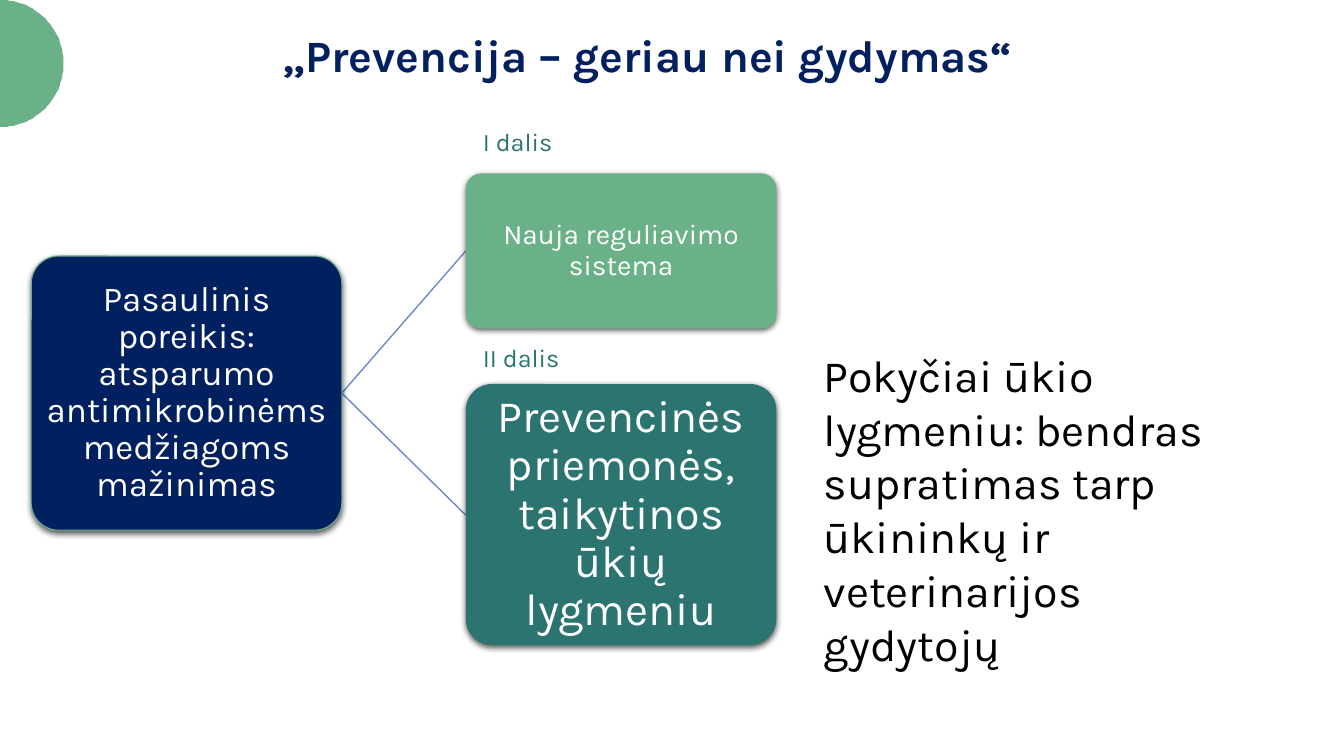
import math
from lxml import etree
from pptx import Presentation, util as u
from pptx.dml.color import RGBColor
from pptx.enum import shapes, text
from pptx.oxml import parse_xml
from pptx.oxml.ns import nsdecls, qn

PX = 9144
HUES = {"navy": "002060", "green": "6BB188", "teal": "2C7470",
        "link": "6D89CB", "white": "FFFFFF", "black": "000000"}
SHADE = (f'<a:effectLst {nsdecls("a")}><a:outerShdw blurRad="57150" dist="19050" '
         'dir="5400000" algn="ctr" rotWithShape="0"><a:srgbClr val="000000">'
         '<a:alpha val="63000"/></a:srgbClr></a:outerShdw></a:effectLst>')


def hue(name):
    return RGBColor.from_string(HUES[name])


def write(shape, words, size, color, bold=False, align="LEFT", anchor="TOP",
          gap=1.0, inset=None):
    frame = shape.text_frame
    frame.word_wrap = True
    frame.vertical_anchor = text.MSO_ANCHOR[anchor]
    if inset is not None:
        frame.margin_left = frame.margin_right = inset * PX
        frame.margin_top = frame.margin_bottom = inset * PX
    para = frame.paragraphs[0]
    para.alignment = text.PP_ALIGN[align]
    para.line_spacing = gap
    run = para.add_run()
    run.text = words
    run.font.name = "Karla"
    run.font.size = u.Pt(size)
    run.font.bold = bold
    run.font.color.rgb = hue(color)


deck = Presentation()
deck.slide_width, deck.slide_height = 1333 * PX, 750 * PX
slide = deck.slides.add_slide(deck.slide_layouts[6])
items = slide.shapes

turns = [math.radians(deg) for deg in range(-90, 91, 3)]
arc = [(63 * math.cos(t), 63 + 63 * math.sin(t)) for t in turns]
pen = items.build_freeform(*arc[0], scale=PX)
pen.add_line_segments(arc[1:], close=True)
disc = pen.convert_to_shape()
disc.shadow.inherit = False
disc.fill.solid()
disc.fill.fore_color.rgb = hue("green")
disc.line.fill.background()

for end in (249, 511):
    link = items.add_connector(shapes.MSO_CONNECTOR.STRAIGHT,
                               339 * PX, 390 * PX, 462 * PX, end * PX)
    link.line.color.rgb = hue("link")
    link.line.width = u.Pt(1)
    etree.SubElement(link._element.spPr, qn("a:effectLst"))

cards = [
    (31, 254, 272, "navy", "green", 25, 0.88,
     "Pasaulinis poreikis: atsparumo antimikrobinėms medžiagoms mažinimas"),
    (462, 172, 154, "green", None, 20, 0.9, "Nauja reguliavimo sistema"),
    (462, 381, 259, "teal", None, 32, 0.9,
     "Prevencinės priemonės, taikytinos ūkių lygmeniu"),
]
for left, top, high, fill, edge, size, gap, words in cards:
    card = items.add_shape(shapes.MSO_SHAPE.ROUNDED_RECTANGLE,
                           left * PX, top * PX, 308 * PX, high * PX)
    card.adjustments[0] = 0.1
    card.fill.solid()
    card.fill.fore_color.rgb = hue(fill)
    if edge:
        card.line.color.rgb = hue(edge)
        card.line.width = u.Pt(0.75)
    else:
        card.line.fill.background()
    card._element.spPr.append(parse_xml(SHADE))
    write(card, words, size, "white", align="CENTER", anchor="MIDDLE",
          gap=gap, inset=2)

notes = [
    (17, 23, 1251, 64, "„Prevencija – geriau nei gydymas“",
     dict(size=32, color="navy", bold=True, align="CENTER")),
    (469, 120, 108, 40, "I dalis", dict(size=18, color="teal")),
    (469, 335, 108, 40, "II dalis", dict(size=18, color="teal")),
    (807, 340, 462, 330, "Pokyčiai ūkio lygmeniu: bendras supratimas tarp "
     "ūkininkų ir veterinarijos gydytojų", dict(size=32, color="black")),
]
for left, top, wide, high, words, look in notes:
    box = items.add_textbox(left * PX, top * PX, wide * PX, high * PX)
    write(box, words, **look)

deck.save("out.pptx")
